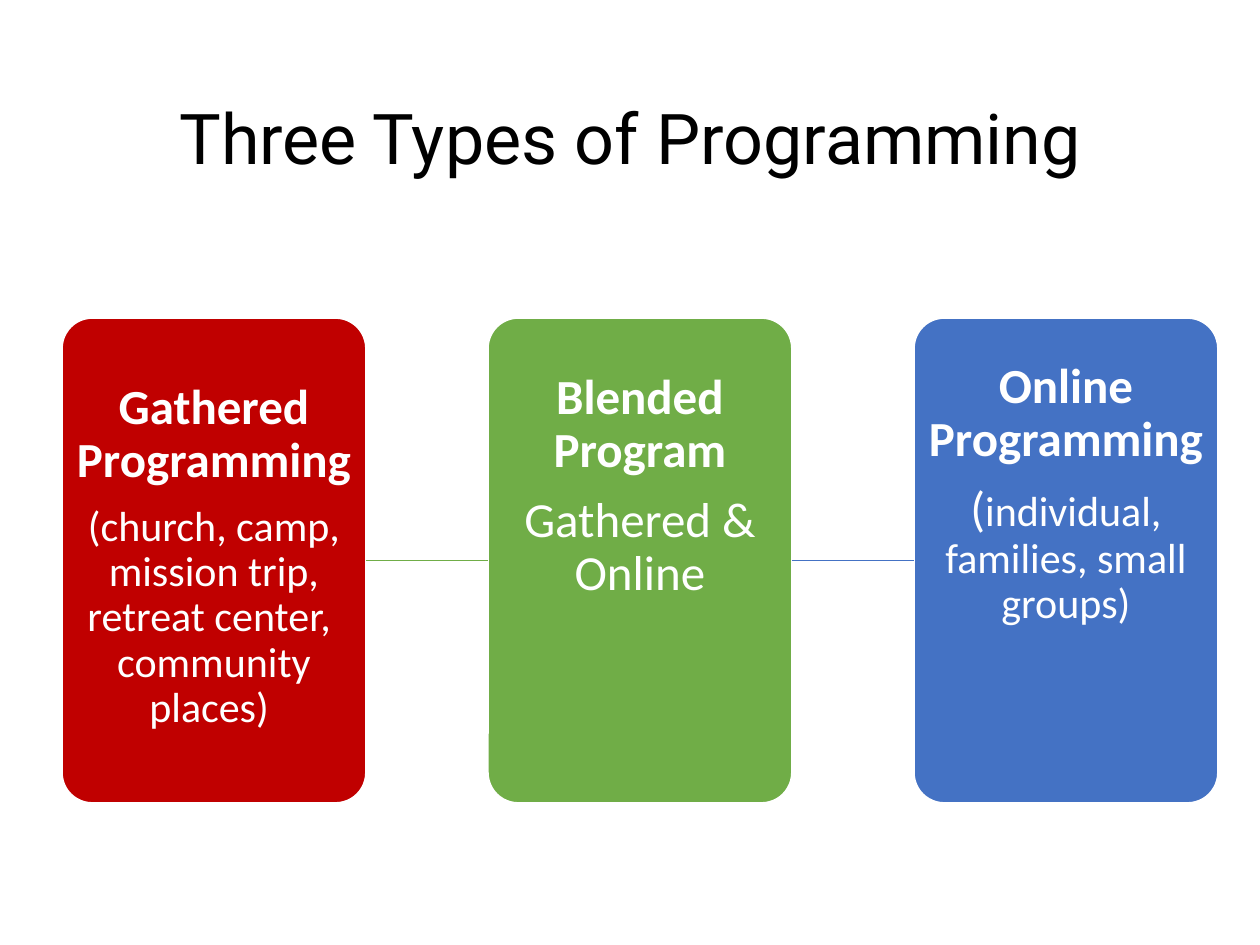
from lxml import etree
from pptx import Presentation
from pptx import util as u
from pptx.dml.color import RGBColor
from pptx.enum import shapes, text
from pptx.oxml.ns import qn

PX_PER_INCH = 126
COLORS = {"white": "FFFFFF", "black": "000000", "gathered": "C00000",
          "blended": "70AD47", "online": "4472C4"}
CARD_LEFT, CARD_TOP, CARD_WIDTH, CARD_HEIGHT, CARD_PITCH = 62, 318, 304, 485, 426
CARD_INSET = 3

# Color, top inset in px, heading, detail runs as (words, size)
PROGRAMS = [
    ("gathered", 55, "Gathered Programming ",
     [("(church, camp, mission trip, retreat center, \vcommunity places) ", 24)]),
    ("blended", 45, "Blended Program", [("Gathered & Online", 28)]),
    ("online", 34, "Online Programming",
     [("(", 28), ("individual, families, small groups)", 24)]),
]


def px(length):
    return u.Emu(round(length * 914400 / PX_PER_INCH))


def color(name):
    return RGBColor.from_string(COLORS[name])


def style_paragraph(paragraph, font_name, size, color_name, bold=False):
    paragraph.alignment = text.PP_ALIGN.CENTER
    paragraph.line_spacing = 0.9
    font = paragraph.font
    font.name, font.size, font.bold = font_name, u.Pt(size), bold
    font.color.rgb = color(color_name)


def set_title(slide, words):
    title = slide.shapes.title
    title.left, title.top, title.width, title.height = map(px, (87, 50, 1086, 183))
    title.text_frame.text = words
    title.text_frame.vertical_anchor = text.MSO_ANCHOR.MIDDLE
    style_paragraph(title.text_frame.paragraphs[0], "Roboto", 40, "black")


def add_card(slide, index, fill, top_inset, heading, details):
    card = slide.shapes.add_shape(
        shapes.MSO_SHAPE.ROUNDED_RECTANGLE, px(CARD_LEFT + index * CARD_PITCH),
        px(CARD_TOP), px(CARD_WIDTH), px(CARD_HEIGHT))
    card.adjustments[0] = 0.1
    card.shadow.inherit = False
    card.fill.solid()
    card.fill.fore_color.rgb = color(fill)
    card.line.color.rgb = color("white")
    card.line.width = u.Pt(1)

    frame = card.text_frame
    frame.word_wrap = True
    frame.vertical_anchor = text.MSO_ANCHOR.TOP
    frame.margin_left = frame.margin_right = frame.margin_bottom = px(CARD_INSET)
    frame.margin_top = px(top_inset)

    # Bold heading
    name = frame.paragraphs[0]
    name.text = heading
    name.space_after = u.Pt(9.8)
    style_paragraph(name, "Calibri", 28, "white", bold=True)

    # Settings under the heading
    setting = frame.add_paragraph()
    style_paragraph(setting, "Calibri", details[-1][1], "white")
    for words, size in details:
        for line_number, line in enumerate(words.split("\v")):
            if line_number:
                setting.add_line_break()
            run = setting.add_run()
            run.text = line
            run.font.size = u.Pt(size)
    return card


def link_cards(slide, start, end, color_name):
    link = slide.shapes.add_connector(shapes.MSO_CONNECTOR.STRAIGHT, 0, 0, 0, 0)
    link.begin_connect(start, 3)
    link.end_connect(end, 1)
    link.line.color.rgb = color(color_name)
    link.line.width = u.Pt(1)
    etree.SubElement(link._element.spPr, qn("a:effectLst"))


def main():
    deck = Presentation()
    deck.slide_width, deck.slide_height = u.Inches(10), u.Inches(7.5)
    slide = deck.slides.add_slide(deck.slide_layouts[5])
    set_title(slide, "Three Types of Programming")

    # Three cards, each link in the color of the card it leads from or to
    cards = [add_card(slide, i, *program) for i, program in enumerate(PROGRAMS)]
    for start, end, program in zip(cards, cards[1:], PROGRAMS[1:]):
        link_cards(slide, start, end, program[0])
    deck.save("out.pptx")


if __name__ == "__main__":
    main()
